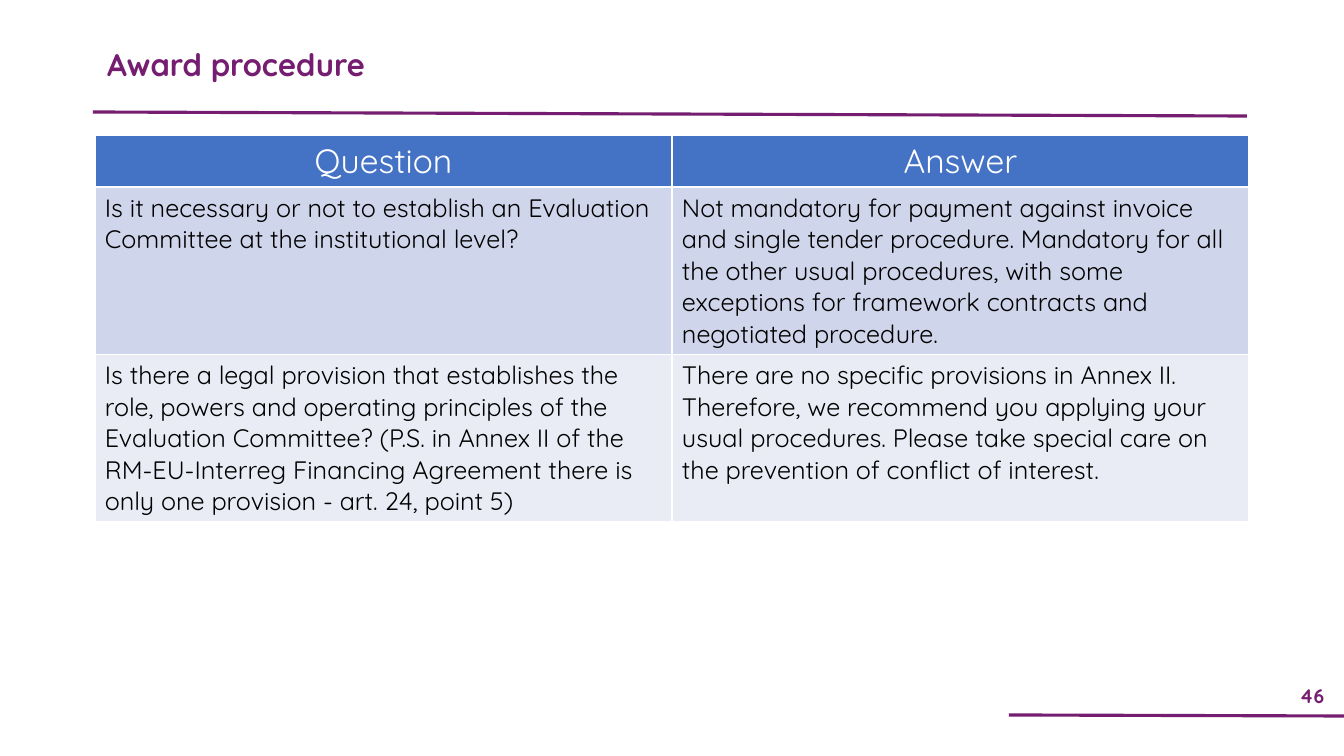
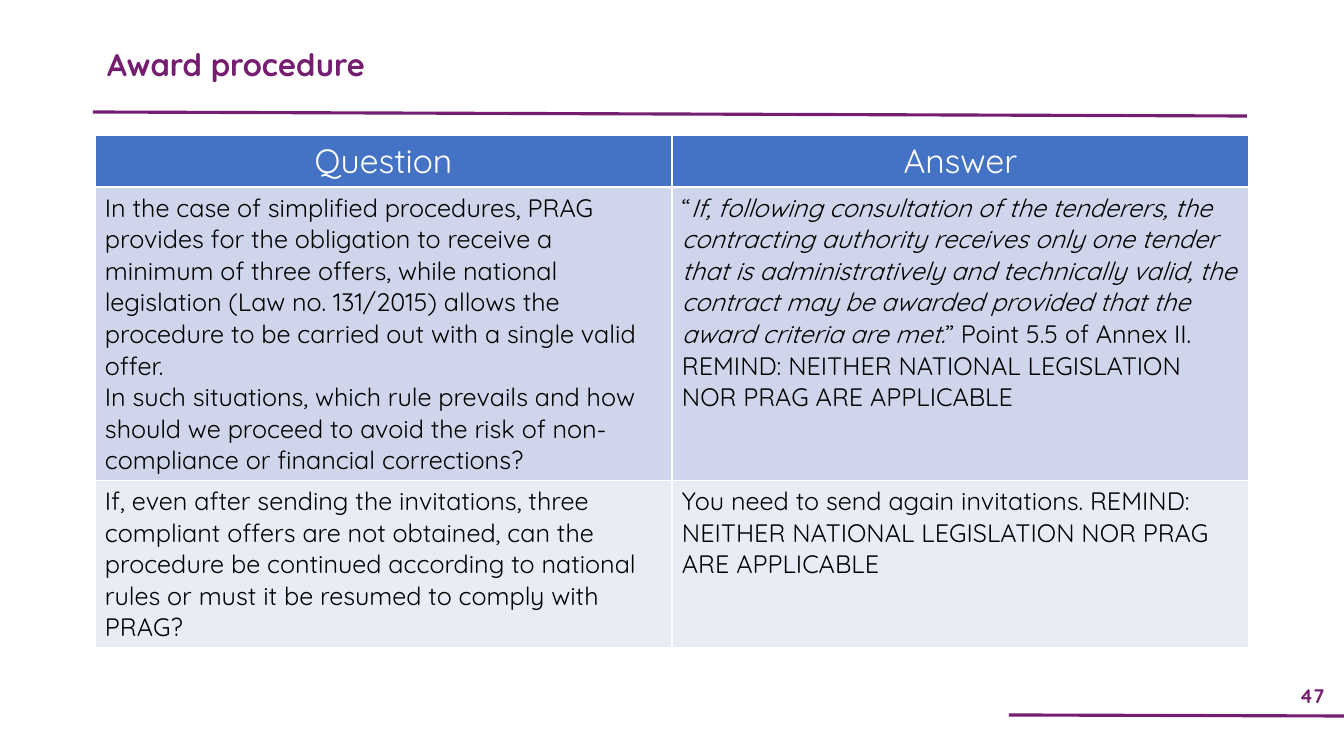
import pptx
import pptx.util
import pptx.dml.color
import pptx.enum.shapes
import pptx.enum.text
import pptx.oxml
import pptx.oxml.ns
import lxml.etree

PX = 914400 / 100.8  # EMU in one px
FONT = "Quicksand"
COLORS = {
    "purple": "751D70",
    "header": "4472C4",
    "band_dark": "CFD5EA",
    "band_light": "E9EBF5",
    "white": "FFFFFF",
    "black": "000000",
}
ALIGN = pptx.enum.text.PP_ALIGN
ANCHOR = pptx.enum.text.MSO_ANCHOR

# Boxes are left, top, width, height in px
TITLE_BOX = (97, 48, 981, 42)
NUMBER_BOX = (1280, 678, 64, 36)
TABLE_BOX = (95, 135, 1154)
RULES = [(93, 112, 1247, 116), (1009, 715, 1345, 716)]
HEADER_HEIGHT = 52
LINE_HEIGHT = 31.5
CELL_PADDING = 10

# Each answer or question is a list of paragraphs; a paragraph is text or
# a list of (text, italic) runs.
SLIDES = [
    {
        "title": "Award procedure",
        "number": 46,
        "rows": [
            (5, ["Is it necessary or not to establish an Evaluation Committee at the "
                 "institutional level?"],
             ["Not mandatory for payment against invoice and single tender procedure. "
              "Mandatory for all the other usual procedures, with some exceptions for "
              "framework contracts and negotiated procedure."]),
            (5, ["Is there a legal provision that establishes the role, powers and "
                 "operating principles of the Evaluation Committee? (P.S. in Annex II of "
                 "the RM-EU-Interreg Financing Agreement there is only one provision - "
                 "art. 24, point 5)"],
             ["There are no specific provisions in Annex II. Therefore, we recommend you "
              "applying your usual procedures. Please take special care on the "
              "prevention of conflict of interest."]),
        ],
    },
    {
        "title": "Award procedure",
        "number": 47,
        "rows": [
            (9, ["In the case of simplified procedures, PRAG provides for the obligation "
                 "to receive a minimum of three offers, while national legislation (Law "
                 "no. 131/2015) allows the procedure to be carried out with a single "
                 "valid offer.",
                 "In such situations, which rule prevails and how should we proceed to "
                 "avoid the risk of non-compliance or financial corrections?"],
             [[("“", False),
               ("If, following consultation of the tenderers, the contracting authority "
                "receives only one tender that is administratively and technically "
                "valid, the contract may be awarded provided that the award criteria "
                "are met.", True),
               ("” Point 5.5 of Annex II. REMIND: NEITHER NATIONAL LEGISLATION NOR PRAG "
                "ARE APPLICABLE", False)]]),
            (5, ["If, even after sending the invitations, three compliant offers are not "
                 "obtained, can the procedure be continued according to national rules "
                 "or must it be resumed to comply with PRAG?"],
             ["You need to send again invitations. REMIND: NEITHER NATIONAL LEGISLATION "
              "NOR PRAG ARE APPLICABLE"]),
        ],
    },
]


def emu(*lengths):
    return [pptx.util.Emu(round(length * PX)) for length in lengths]


def rgb(name):
    return pptx.dml.color.RGBColor.from_string(COLORS[name])


def write_text(frame, paragraphs, size=18, color="black", bold=False,
               align=ALIGN.LEFT, line_spacing=None):
    for index, content in enumerate(paragraphs):
        paragraph = frame.paragraphs[0] if index == 0 else frame.add_paragraph()
        paragraph.alignment = align
        paragraph.line_spacing = line_spacing
        runs = [(content, False)] if isinstance(content, str) else content
        for text, italic in runs:
            run = paragraph.add_run()
            run.text = text
            run.font.name = FONT
            run.font.size = pptx.util.Pt(size)
            run.font.bold = bold
            run.font.italic = italic
            run.font.color.rgb = rgb(color)


def add_rule(slide, ends):
    rule = slide.shapes.add_connector(
        pptx.enum.shapes.MSO_CONNECTOR.STRAIGHT, *emu(*ends))
    rule.line.color.rgb = rgb("purple")
    rule.line.width = pptx.util.Pt(2.25)
    lxml.etree.SubElement(rule._element.spPr, pptx.oxml.ns.qn("a:effectLst"))


def add_title(slide, title, box):
    shape = slide.shapes.title
    shape.left, shape.top, shape.width, shape.height = emu(*box)
    frame = shape.text_frame
    frame.auto_size = pptx.enum.text.MSO_AUTO_SIZE.NONE
    frame.vertical_anchor = ANCHOR.TOP
    write_text(frame, [title], size=22.2, color="purple", bold=True, line_spacing=0.8)


def add_number(slide, number, box):
    frame = slide.shapes.add_textbox(*emu(*box)).text_frame
    frame.word_wrap = True
    frame.vertical_anchor = ANCHOR.MIDDLE
    write_text(frame, [str(number)], size=14, color="purple", bold=True,
               align=ALIGN.CENTER)


def style_cell(cell, fill):
    # Borders come before the fill in the cell properties
    properties = cell._tc.get_or_add_tcPr()
    for side in ("lnL", "lnR", "lnT", "lnB"):
        properties.append(pptx.oxml.parse_xml(
            f'<a:{side} {pptx.oxml.ns.nsdecls("a")} w="12700"><a:solidFill>'
            f'<a:srgbClr val="{COLORS["white"]}"/></a:solidFill></a:{side}>'))
    cell.fill.solid()
    cell.fill.fore_color.rgb = rgb(fill)
    cell.margin_left = cell.margin_right = emu(10)[0]
    cell.margin_top = cell.margin_bottom = emu(CELL_PADDING / 2)[0]


def add_question_table(slide, rows, box):
    left, top, width = box
    heights = [HEADER_HEIGHT]
    heights += [lines * LINE_HEIGHT + CELL_PADDING for lines, *_ in rows]
    table = slide.shapes.add_table(
        len(heights), 2, *emu(left, top, width, sum(heights))).table
    for row, height in zip(table.rows, heights):
        row.height = emu(height)[0]

    # Header
    for cell, label in zip(table.rows[0].cells, ("Question", "Answer")):
        style_cell(cell, "header")
        write_text(cell.text_frame, [label], size=24, color="white",
                   align=ALIGN.CENTER)

    # Questions and answers, in alternating bands
    for index, (_, *texts) in enumerate(rows):
        for cell, paragraphs in zip(table.rows[index + 1].cells, texts):
            style_cell(cell, ("band_dark", "band_light")[index % 2])
            write_text(cell.text_frame, paragraphs)


def add_question_slide(presentation, content):
    slide = presentation.slides.add_slide(presentation.slide_layouts[5])
    for ends in RULES:
        add_rule(slide, ends)
    add_number(slide, content["number"], NUMBER_BOX)
    add_title(slide, content["title"], TITLE_BOX)
    add_question_table(slide, content["rows"], TABLE_BOX)


def main():
    presentation = pptx.Presentation()
    presentation.slide_width, presentation.slide_height = emu(1344, 756)
    for content in SLIDES:
        add_question_slide(presentation, content)
    presentation.save("out.pptx")


if __name__ == "__main__":
    main()
